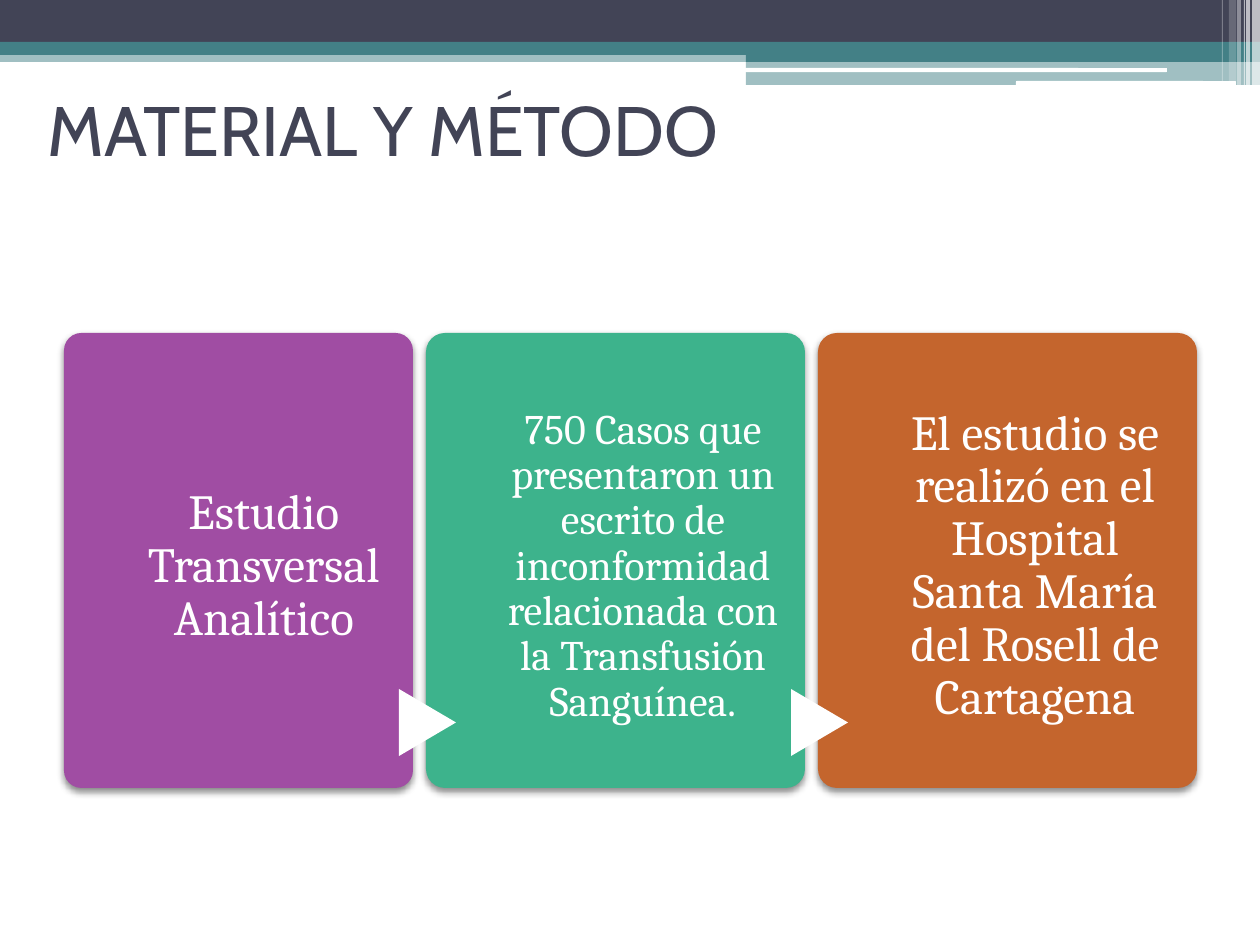
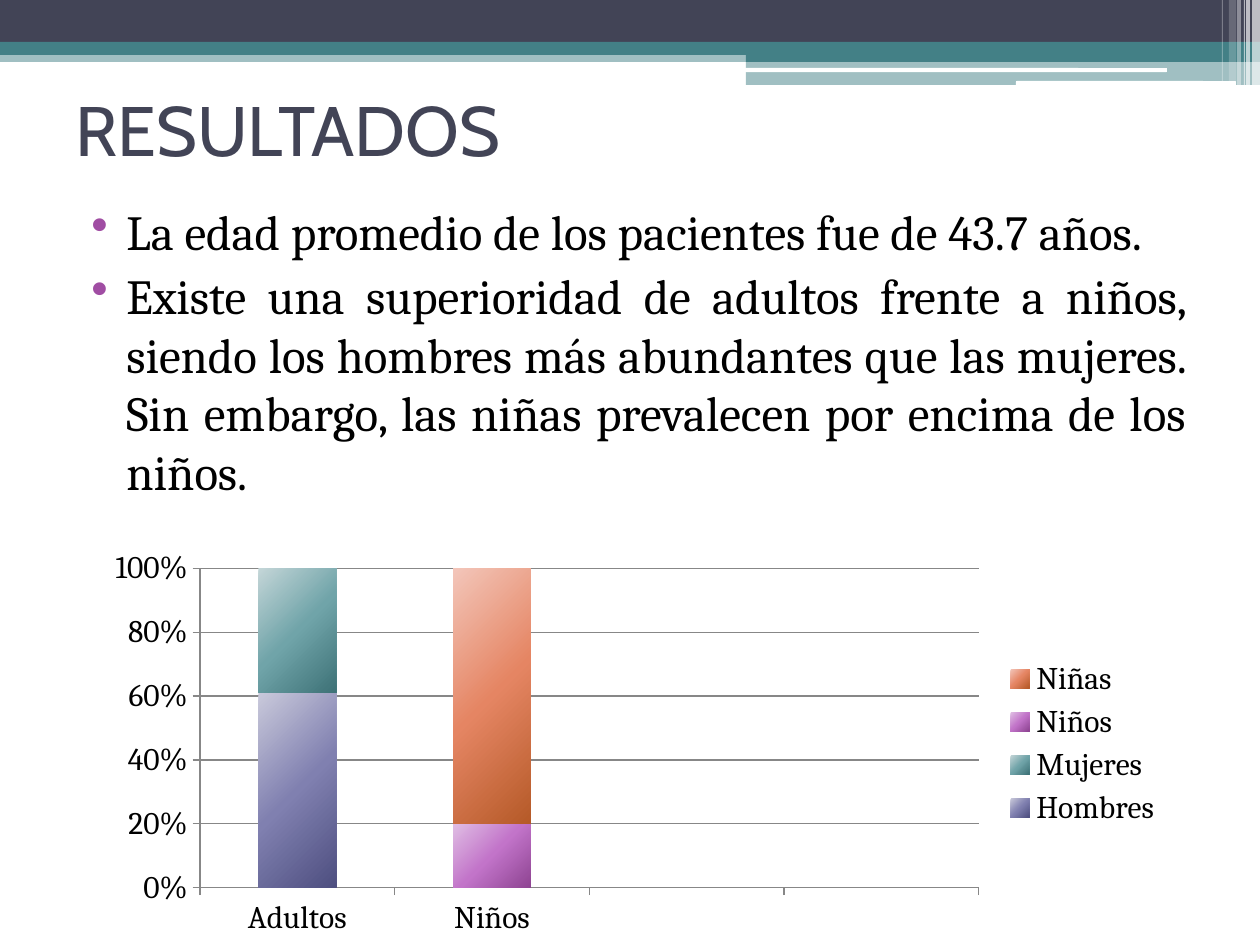
import copy

import lxml.etree
import pptx
import pptx.chart.data
import pptx.dml.color
import pptx.enum.chart
import pptx.enum.shapes
import pptx.enum.text
import pptx.oxml
import pptx.oxml.ns
import pptx.util

EMU_PER_PX = 914400 / 126
COLORS = {
    "navy": "424456", "teal": "438086", "white": "FFFFFF", "black": "000000",
    "purple": "A04DA3", "green": "3DB38C", "orange": "C4652D", "axis": "878787",
}
GRADIENTS = {
    "Hombres": ("C9C9DB", "8080B0", "4E4F80"),
    "Mujeres": ("C4D6D8", "70A4A9", "3E7277"),
    "Niños": ("E0BEE4", "C274C9", "8E4492"),
    "Niñas": ("F3C6BA", "E58563", "B55A28"),
}
TITLE_FONT = "Cabin"
BODY_FONT = "Cambria"
SHAPES = pptx.enum.shapes.MSO_SHAPE
ALIGN = pptx.enum.text.PP_ALIGN
ANCHOR = pptx.enum.text.MSO_ANCHOR
qn = pptx.oxml.ns.qn

BANDS = [
    (0, 50, 1260, 12, "teal", 50),
    (0, 0, 1260, 42, "navy", 100),
    (0, 42, 1260, 13, "teal", 100),
    (746, 49, 514, 13, "teal", 100),
    (746, 62, 514, 23, "teal", 50),
]
ROUNDED_LINES = [(745, 68, 422, 4, "white", 100), (1016, 81, 220, 5, "white", 100)]
STRIPES = [
    (1252, 8, 85, 65), (1246, 4, 85, 65), (1244, 1, 85, 60),
    (1237, 4, 85, 40), (1229, 7, 81, 20), (1222, 1, 81, 30),
]


def px(*lengths):
    return [pptx.util.Emu(round(length * EMU_PER_PX)) for length in lengths]


def rgb(value):
    return pptx.dml.color.RGBColor.from_string(COLORS.get(value, value))


def add_block(slide, kind, box, color, opacity=100):
    shape = slide.shapes.add_shape(kind, *px(*box))
    shape.shadow.inherit = False
    shape.fill.solid()
    shape.fill.fore_color.rgb = rgb(color)
    shape.line.fill.background()
    if opacity < 100:
        color_element = shape._element.spPr.find(qn("a:solidFill"))[0]
        alpha = lxml.etree.SubElement(color_element, qn("a:alpha"))
        alpha.set("val", str(opacity * 1000))
    return shape


def add_shadow(shape):
    effects = shape._element.spPr.find(qn("a:effectLst"))
    effects.append(pptx.oxml.parse_xml(
        f'<a:outerShdw {pptx.oxml.ns.nsdecls("a")} blurRad="50800" dist="25400" dir="5400000" '
        'rotWithShape="0"><a:srgbClr val="000000"><a:alpha val="45000"/></a:srgbClr></a:outerShdw>'))


def write_text(paragraph, text, *, size, font=BODY_FONT, color="black",
               align=ALIGN.LEFT, line_spacing=None, space_before=0):
    paragraph.alignment = align
    paragraph.space_before = pptx.util.Pt(space_before)
    if line_spacing:
        paragraph.line_spacing = line_spacing
    run = paragraph.add_run()
    run.text = text
    run.font.size = pptx.util.Pt(size)
    run.font.name = font
    run.font.color.rgb = rgb(color)


def add_bullet(paragraph, indent, hanging):
    properties = paragraph._p.get_or_add_pPr()
    left, first = px(indent, -hanging)
    properties.set("marL", str(left))
    properties.set("indent", str(first))
    bullet_color = lxml.etree.SubElement(properties, qn("a:buClr"))
    lxml.etree.SubElement(bullet_color, qn("a:srgbClr")).set("val", COLORS["purple"])
    lxml.etree.SubElement(properties, qn("a:buChar")).set("char", "•")


def add_header(slide):
    for *box, color, opacity in BANDS:
        add_block(slide, SHAPES.RECTANGLE, box, color, opacity)
    for *box, color, opacity in ROUNDED_LINES:
        add_block(slide, SHAPES.ROUNDED_RECTANGLE, box, color, opacity)
    for left, width, height, opacity in STRIPES:
        add_block(slide, SHAPES.RECTANGLE, (left, 0, width, height), "white", opacity)


def add_titled_slide(presentation, text, title_left):
    slide = presentation.slides.add_slide(presentation.slide_layouts[5])
    add_header(slide)
    title = slide.shapes.title
    title.left, title.top, title.width, title.height = px(title_left, 55, 1134, 147)
    title.text_frame.vertical_anchor = ANCHOR.MIDDLE
    write_text(title.text_frame.paragraphs[0], text, size=40, font=TITLE_FONT, color="navy")
    return slide


def add_card(slide, box, text, color, size, has_arrow):
    left, top, width, height = box
    card = add_block(slide, SHAPES.ROUNDED_RECTANGLE, box, color)
    card.adjustments[0] = 0.05
    add_shadow(card)
    if has_arrow:
        arrow = add_block(slide, SHAPES.FLOWCHART_EXTRACT, (left - 32, top + 361, 67, 57), "white")
        arrow.rotation = 90
    text_box = slide.shapes.add_textbox(*px(left + width * 0.2, top, width * 0.745, height))
    frame = text_box.text_frame
    frame.word_wrap = True
    frame.vertical_anchor = ANCHOR.MIDDLE
    frame.margin_left = frame.margin_right = frame.margin_bottom = 0
    frame.margin_top = px(12)[0]
    write_text(frame.paragraphs[0], text, size=size, color="white",
               align=ALIGN.CENTER, line_spacing=0.9)


def add_card_row(slide, box, cards, gap=13):
    left, top, _, height = box
    for index, (width, text, color, size) in enumerate(cards):
        add_card(slide, (left, top, width, height), text, color, size, index > 0)
        left += width + gap


def add_bullet_list(slide, box, items):
    frame = slide.shapes.add_textbox(*px(*box)).text_frame
    frame.word_wrap = True
    for index, item in enumerate(items):
        paragraph = frame.add_paragraph() if index else frame.paragraphs[0]
        write_text(paragraph, item, size=28, align=ALIGN.JUSTIFY, space_before=3)
        add_bullet(paragraph, 50, 35)


def fill_gradient(series, colors):
    fill = series.format.fill
    fill.gradient()
    fill.gradient_angle = 315
    stop_list = next(series._element.iter(qn("a:gsLst")))
    stop_list.insert(1, copy.deepcopy(stop_list[0]))
    for stop, color, position in zip(fill.gradient_stops, colors, (0, 0.5, 1)):
        stop.color.rgb = rgb(color)
        stop.position = position


def add_patient_chart(slide, box):
    data = pptx.chart.data.CategoryChartData()
    data.categories = ["Adultos", "Niños", "", ""]
    data.add_series("Hombres", (61, None, None, None))
    data.add_series("Mujeres", (39, None, None, None))
    data.add_series("Niños", (None, 20, None, None))
    data.add_series("Niñas", (None, 80, None, None))
    chart = slide.shapes.add_chart(
        pptx.enum.chart.XL_CHART_TYPE.COLUMN_STACKED_100, *px(*box), data).chart
    chart.has_title = False
    chart.font.name = BODY_FONT
    chart.font.size = pptx.util.Pt(18)
    chart.font.color.rgb = rgb("black")
    chart.has_legend = True
    chart.legend.position = pptx.enum.chart.XL_LEGEND_POSITION.RIGHT
    chart.legend.include_in_layout = False
    plot = chart.plots[0]
    plot.vary_by_categories = False
    plot.gap_width = 150
    plot.overlap = 100
    for series in plot.series:
        fill_gradient(series, GRADIENTS[series.name])
    value_axis = chart.value_axis
    value_axis.has_major_gridlines = True
    value_axis.tick_labels.number_format = "0%"
    value_axis.tick_labels.number_format_is_linked = False
    for line in (value_axis.format.line, value_axis.major_gridlines.format.line,
                 chart.category_axis.format.line):
        line.color.rgb = rgb("axis")
        line.width = pptx.util.Pt(0.75)


def build_method_slide(presentation):
    slide = add_titled_slide(presentation, "MATERIAL Y MÉTODO", 35)
    add_card_row(slide, (64, 333, 1133, 455), [
        (349, "Estudio Transversal Analítico", "purple", 28),
        (379, "750 Casos que presentaron un escrito de inconformidad relacionada con "
              "la Transfusión Sanguínea.", "green", 24),
        (379, "El estudio se realizó en el Hospital Santa María del Rosell de Cartagena",
         "orange", 28),
    ])


def build_results_slide(presentation):
    slide = add_titled_slide(presentation, "RESULTADOS", 63)
    add_bullet_list(slide, (64, 195, 1134, 694), [
        "La edad promedio de los pacientes fue de 43.7 años.",
        "Existe una superioridad de adultos frente a niños, siendo los hombres más abundantes "
        "que las mujeres. Sin embargo, las niñas prevalecen por encima de los niños.",
    ])
    add_patient_chart(slide, (94, 542, 1081, 403))


def main():
    presentation = pptx.Presentation()
    presentation.slide_width, presentation.slide_height = px(1260, 945)
    build_method_slide(presentation)
    build_results_slide(presentation)
    presentation.save("out.pptx")


if __name__ == "__main__":
    main()
